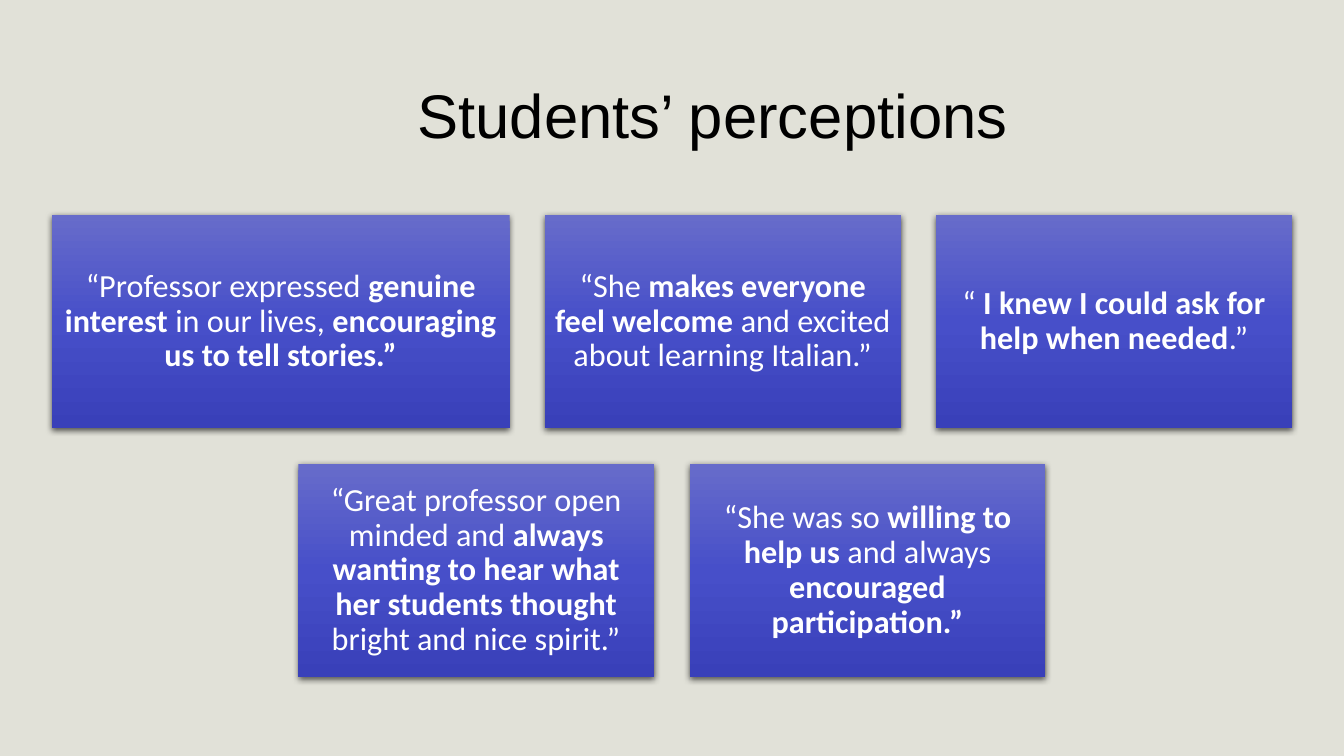
from dataclasses import dataclass

from lxml import etree
from pptx import Presentation
from pptx.dml.color import RGBColor
from pptx.enum.shapes import MSO_SHAPE as Shape
from pptx.enum.text import MSO_ANCHOR as Anchor, PP_ALIGN as Align
from pptx.oxml import parse_xml
from pptx.oxml.ns import nsdecls, qn
from pptx.util import Inches, Pt

WIDE, HIGH = 13.33, 7.5
CARD_W, CARD_H, GAP = 3.53, 2.12, 0.35
TOP = 2.13
FADE = {0: "676CCA", 50: "474FC9", 100: "3940B9"}
PAD = dict.fromkeys(
    ("margin_left", "margin_top", "margin_right", "margin_bottom"), Inches(0.1)
)
BODY = {"name": "Calibri", "size": Pt(23)}
HEAD = {"name": "Arial", "size": Pt(44), "bold": False}


@dataclass
class Card:
    text: str  # bold parts stand between asterisks
    width: float = CARD_W


ROWS = [
    [
        Card("“Professor expressed *genuine interest* in our lives,"
             "* encouraging us to tell stories.”*", 4.54),
        Card("“She *makes everyone feel welcome* and excited about learning Italian.”"),
        Card("“ *I knew I could ask for help when needed*.”"),
    ],
    [
        Card("“Great professor open minded and *always wanting to hear what "
             "her students thought* bright and nice spirit.”"),
        Card("“She was so* willing to help us* and always* encouraged participation.”*"),
    ],
]


def color(code: str) -> RGBColor:
    return RGBColor.from_string(code)


def apply(item, form: dict) -> None:
    for key, val in form.items():
        setattr(item, key, val)


def shade(box) -> None:
    """Give a box its gradient and soft shadow."""
    stops = "".join(
        f'<a:gs pos="{pos * 1000}"><a:srgbClr val="{code}"/></a:gs>'
        for pos, code in FADE.items()
    )
    grad = parse_xml(
        f'<a:gradFill {nsdecls("a")} rotWithShape="1"><a:gsLst>{stops}</a:gsLst>'
        '<a:lin ang="5400000" scaled="0"/></a:gradFill>'
    )
    box.fill.background()
    box.line.fill.background()
    box.shadow.inherit = False
    props = box.element.spPr
    props.replace(props.find(qn("a:noFill")), grad)
    glow = etree.SubElement(
        props.find(qn("a:effectLst")), qn("a:outerShdw"),
        blurRad=str(Pt(4.5)), dist=str(Pt(1.5)), dir="5400000", rotWithShape="0",
    )
    tint = etree.SubElement(glow, qn("a:srgbClr"), val="000000")
    etree.SubElement(tint, qn("a:alpha"), val="63000")


def draw(slide, card: Card, left: float, top: float) -> None:
    box = slide.shapes.add_shape(
        Shape.RECTANGLE, *map(Inches, (left, top, card.width, CARD_H))
    )
    shade(box)
    frame = box.text_frame
    apply(frame, PAD | {"word_wrap": True, "vertical_anchor": Anchor.MIDDLE})
    para = frame.paragraphs[0]
    apply(para, {"alignment": Align.CENTER, "line_spacing": 0.9})
    for idx, part in enumerate(card.text.split("*")):
        if part:
            run = para.add_run()
            run.text = part
            apply(run.font, BODY | {"bold": idx % 2 == 1})
            run.font.color.rgb = color("FFFFFF")


def main() -> None:
    deck = Presentation()
    apply(deck, {"slide_width": Inches(WIDE), "slide_height": Inches(HIGH)})
    slide = deck.slides.add_slide(deck.slide_layouts[5])
    back = slide.background.fill
    back.solid()
    back.fore_color.rgb = color("E1E1D8")

    # Title, indented from the left
    title = slide.shapes.title
    apply(title, dict(zip(("left", "top", "width", "height"),
                          map(Inches, (0.5, 0.4, 11.92, 1.45)))))
    title.text = "Students’ perceptions"
    apply(title.text_frame, {"margin_left": Inches(3.64), "word_wrap": True,
                             "vertical_anchor": Anchor.MIDDLE})
    para = title.text_frame.paragraphs[0]
    para.alignment = Align.LEFT
    font = para.runs[0].font
    apply(font, HEAD)
    font.color.rgb = color("000000")

    # Quotes, each row centred on the slide
    for row, cards in enumerate(ROWS):
        span = sum(card.width for card in cards) + GAP * (len(cards) - 1)
        left = (WIDE - span) / 2
        for card in cards:
            draw(slide, card, left, TOP + row * (CARD_H + GAP))
            left += card.width + GAP

    deck.save("out.pptx")


if __name__ == "__main__":
    main()
